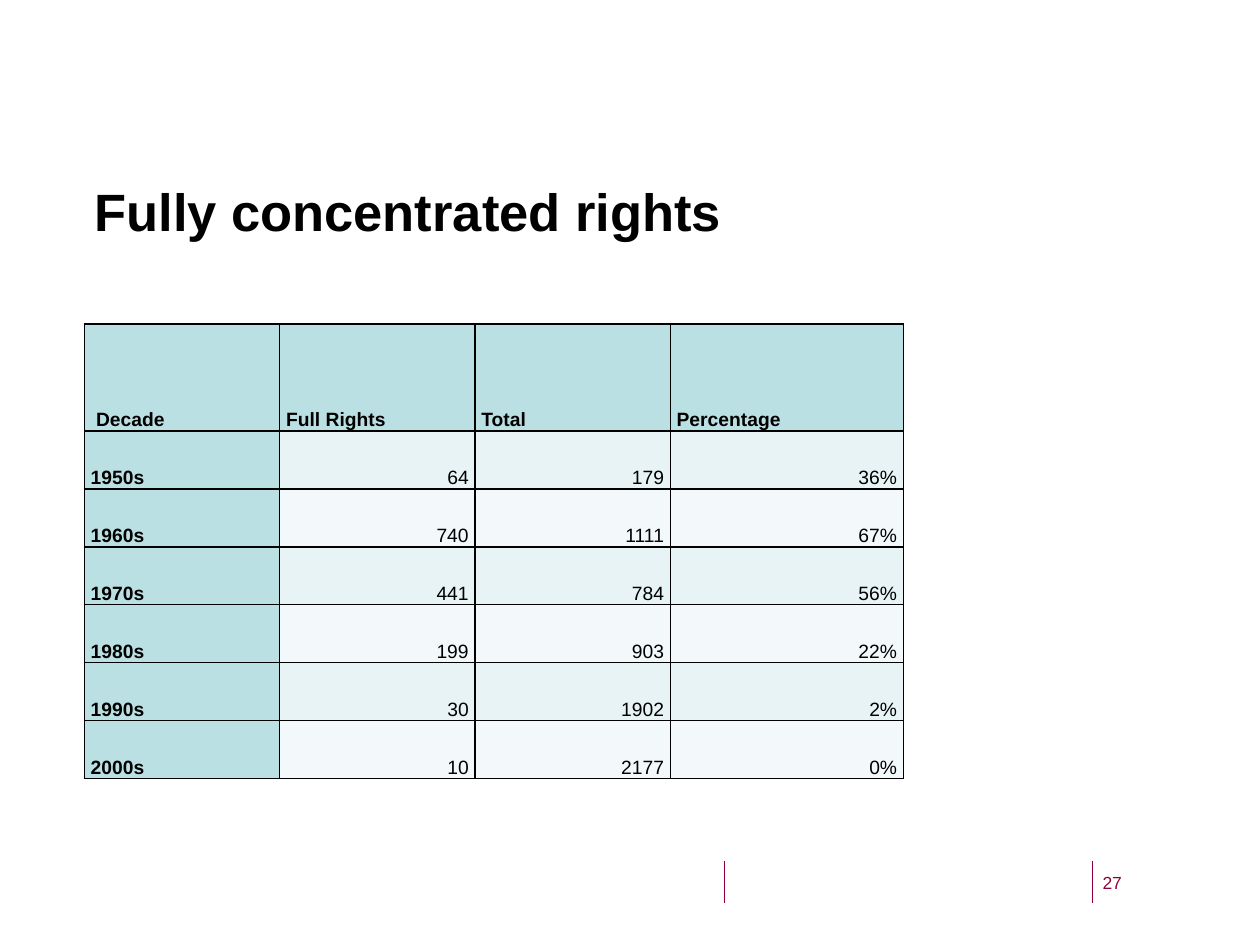
from pptx import Presentation
from pptx.dml.color import RGBColor
from pptx.enum.shapes import MSO_CONNECTOR
from pptx.enum.text import MSO_ANCHOR, PP_ALIGN
from pptx.oxml import parse_xml
from pptx.oxml.ns import nsdecls, qn
from pptx.util import Inches, Pt
from lxml import etree


def rgb(color):
    return RGBColor.from_string(color)


def set_text(tf, text, size, color, bold=False):
    tf.text = text
    p = tf.paragraphs[0]
    font = p.runs[0].font
    font.name, font.size, font.bold = "Arial", Pt(size), bold
    font.color.rgb = rgb(color)
    return p


prs = Presentation()
prs.slide_width, prs.slide_height = Inches(10), Inches(7.5)
s = prs.slides.add_slide(prs.slide_layouts[6])

# Footer rules
for x in (8.67, 5.75):
    line = s.shapes.add_connector(MSO_CONNECTOR.STRAIGHT, Inches(x), Inches(6.83),
                                  Inches(x), Inches(7.17))
    line.line.color.rgb = rgb("90003E")
    line.line.width = Pt(0.75)
    etree.SubElement(line._element.spPr, qn("a:effectLst"))

# Title and slide number
for text, box, size, color, bold in [
    ("Fully concentrated rights", (0.75, 1.42, 8.08, 0.92), 30, "000000", True),
    ("27", (8.75, 6.92, 0.58, 0.43), 10, "90003E", False),
]:
    tf = s.shapes.add_textbox(*[Inches(v) for v in box]).text_frame
    tf.word_wrap = True
    tf.margin_left = tf.margin_right = tf.margin_top = tf.margin_bottom = 0
    set_text(tf, text, size, color, bold)

# Table of rights by decade
rows = [
    (" Decade", "Full Rights", "Total", "Percentage"),
    ("1950s", "64", "179", "36%"),
    ("1960s", "740", "1111", "67%"),
    ("1970s", "441", "784", "56%"),
    ("1980s", "199", "903", "22%"),
    ("1990s", "30", "1902", "2%"),
    ("2000s", "10", "2177", "0%"),
]
widths = [1.55, 1.55, 1.55, 1.85]
heights = [0.85] + [0.46] * 6
table = s.shapes.add_table(len(rows), len(widths), Inches(0.67), Inches(2.57),
                           Inches(sum(widths)), Inches(sum(heights))).table
for column, width in zip(table.columns, widths):
    column.width = Inches(width)
for row, height in zip(table.rows, heights):
    row.height = Inches(height)

for i, row in enumerate(rows):
    for j, text in enumerate(row):
        cell = table.cell(i, j)
        heading = i == 0 or j == 0
        cell.margin_left = cell.margin_right = Inches(0.05)
        cell.margin_top = cell.margin_bottom = 0
        cell.vertical_anchor = MSO_ANCHOR.BOTTOM
        p = set_text(cell.text_frame, text, 11, "000000", heading)
        p.line_spacing = 1.07
        p.alignment = PP_ALIGN.LEFT if heading else PP_ALIGN.RIGHT

        # Borders come before the fill in the cell properties
        tcPr = cell._tc.get_or_add_tcPr()
        for side in ("lnL", "lnR", "lnT", "lnB"):
            tcPr.append(parse_xml(
                f'<a:{side} {nsdecls("a")} w="12700"><a:solidFill>'
                f'<a:srgbClr val="000000"/></a:solidFill></a:{side}>'))
        cell.fill.solid()
        band = "E7F3F4" if i % 2 else "F3F9FA"
        cell.fill.fore_color.rgb = rgb("BBE0E3" if heading else band)

prs.save("out.pptx")
